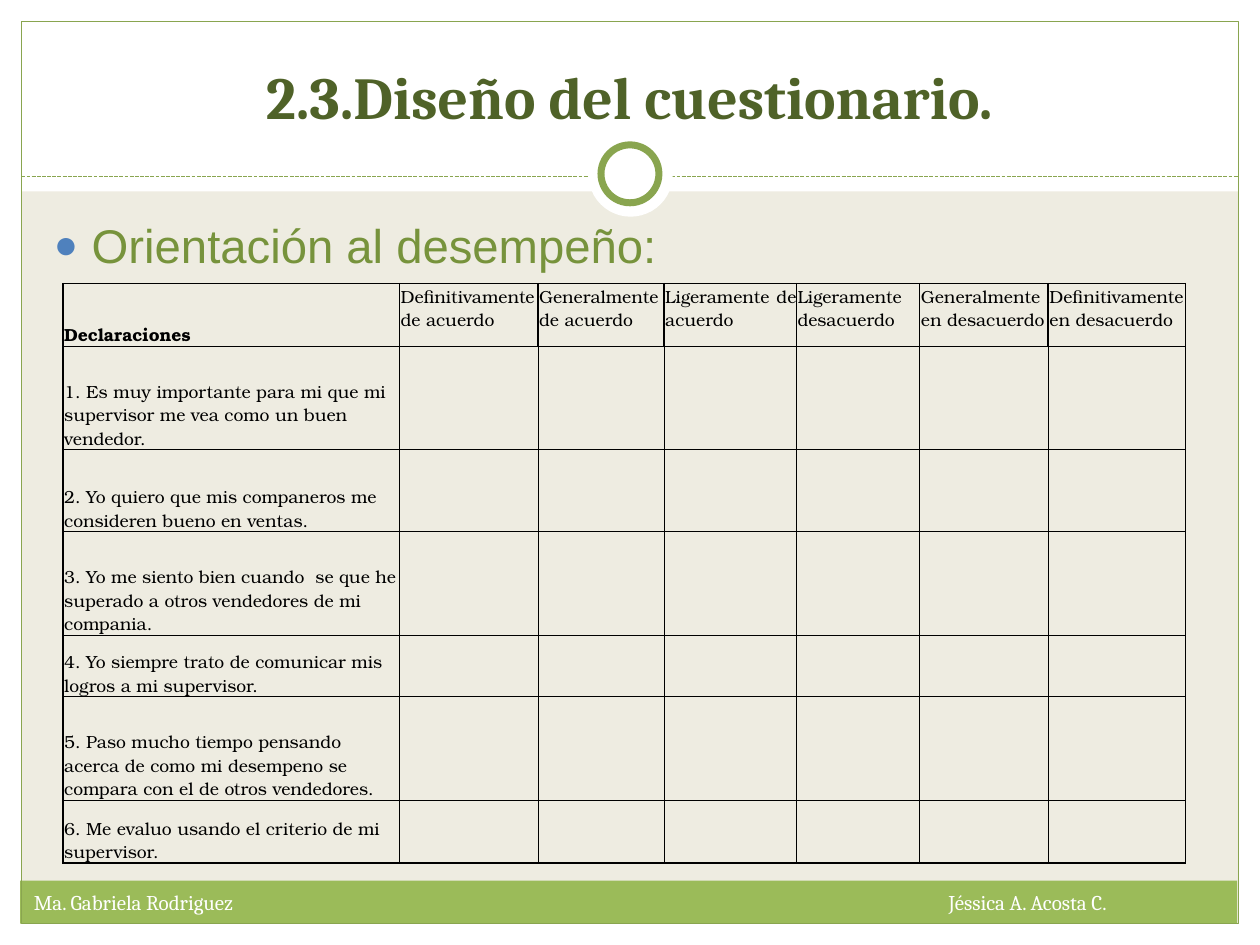
"""Build the questionnaire design slide with its performance orientation table."""
from lxml.etree import SubElement
from pptx import Presentation
from pptx.dml.color import RGBColor
from pptx.enum.dml import MSO_LINE
from pptx.enum.shapes import MSO_CONNECTOR, MSO_SHAPE
from pptx.enum.text import MSO_ANCHOR, MSO_AUTO_SIZE, PP_ALIGN
from pptx.oxml.ns import qn
from pptx.util import Inches, Pt

THEME = {
    "background": "EEECE1", "white": "FFFFFF", "black": "000000",
    "band": "9BBB59", "rule": "89A54F", "title": "4F6228",
    "subtitle": "77933C", "bullet": "4F81BD",
    "title_size": 34, "subtitle_size": 27, "footer_size": 12, "table_size": 10,
    "serif": "Cambria", "sans": "Arial", "table_font": "TeX Gyre Bonum",
}


def write(tf, text, size, color, font, bold=False, align=PP_ALIGN.LEFT):
    tf.word_wrap = True
    p = tf.paragraphs[0]
    p.alignment = align
    r = p.add_run()
    r.text = text
    r.font.size = Pt(THEME[size])
    r.font.color.rgb = RGBColor.from_string(THEME[color])
    r.font.name = THEME[font]
    r.font.bold = bold
    return p


def add_border(cell, side, width):
    ln = SubElement(cell._tc.get_or_add_tcPr(), qn(f"a:ln{side}"), w=str(Pt(width)))
    fill = SubElement(ln, qn("a:solidFill"))
    SubElement(fill, qn("a:srgbClr"), val=THEME["black"])


prs = Presentation()
prs.slide_width, prs.slide_height = Inches(10), Inches(7.5)
s = prs.slides.add_slide(prs.slide_layouts[5])
s.background.fill.solid()
s.background.fill.fore_color.rgb = RGBColor.from_string(THEME["background"])

RECT, OVAL = MSO_SHAPE.RECTANGLE, MSO_SHAPE.OVAL
FRAME = [
    (RECT, (0, 7.33, 10, 0.17), "white", None, 0),
    (RECT, (0, 0, 10, 1.52), "white", None, 0),
    (RECT, (0, 0, 0.17, 7.5), "white", None, 0),
    (RECT, (9.83, 0, 0.17, 7.5), "white", None, 0),
    (RECT, (0.16, 6.99, 9.66, 0.34), "band", None, 0),
    (RECT, (0.17, 0.17, 9.66, 7.16), None, "rule", 0.75),
    (OVAL, (4.67, 1.05, 0.67, 0.67), "white", None, 0),
    (OVAL, (4.77, 1.15, 0.46, 0.46), "white", "rule", 4),
]
rule = s.shapes.add_connector(
    MSO_CONNECTOR.STRAIGHT, Inches(0.17), Inches(1.4), Inches(9.83), Inches(1.4))
rule.line.color.rgb = RGBColor.from_string(THEME["rule"])
rule.line.width = Pt(0.75)
rule.line.dash_style = MSO_LINE.SQUARE_DOT
SubElement(rule._element.spPr, qn("a:effectLst"))

for kind, box, fill, line, width in FRAME:
    if kind == OVAL and line is None:
        s.shapes.element.append(rule._element)
    sp = s.shapes.add_shape(kind, *map(Inches, box))
    sp.shadow.inherit = False
    if fill:
        sp.fill.solid()
        sp.fill.fore_color.rgb = RGBColor.from_string(THEME[fill])
    else:
        sp.fill.background()
    if line:
        sp.line.color.rgb = RGBColor.from_string(THEME[line])
        sp.line.width = Pt(width)
    else:
        sp.line.fill.background()

title = s.shapes.title
s.shapes.element.append(title._element)
title.left, title.top, title.width, title.height = map(Inches, (0.08, 0.17, 9.83, 0.92))
title.text_frame.auto_size = MSO_AUTO_SIZE.NONE
title.text_frame.vertical_anchor = MSO_ANCHOR.BOTTOM
write(title.text_frame, "2.3.Diseño del cuestionario.", "title_size", "title", "serif",
      bold=True, align=PP_ALIGN.CENTER)

footer = s.shapes.add_textbox(*map(Inches, (0.17, 7.01, 9.58, 0.4)))
p = write(footer.text_frame, "Ma. Gabriela Rodriguez\tJéssica A. Acosta C.",
          "footer_size", "white", "serif")
tabs = SubElement(p._p.get_or_add_pPr(), qn("a:tabLst"))
SubElement(tabs, qn("a:tab"), pos=str(Inches(7.26)), algn="l")

subtitle = s.shapes.add_textbox(*map(Inches, (0.33, 1.67, 9.3, 0.55)))
p = write(subtitle.text_frame, "Orientación al desempeño:",
          "subtitle_size", "subtitle", "sans")
pPr = p._p.get_or_add_pPr()
pPr.set("marL", str(Inches(0.3)))
pPr.set("indent", str(-Inches(0.3)))
SubElement(SubElement(pPr, qn("a:buClr")), qn("a:srgbClr"), val=THEME["bullet"])
SubElement(pPr, qn("a:buSzPct"), val="85000")
SubElement(pPr, qn("a:buFont"), typeface=THEME["sans"])
SubElement(pPr, qn("a:buChar"), char="●")

COLS = [2.67, 1.1, 1, 1.05, 0.98, 1.02, 1.09]
ROWS = [0.5, 0.82, 0.65, 0.82, 0.49, 0.82, 0.5]
HEADERS = [
    "Declaraciones", "Definitivamente de acuerdo", "Generalmente de acuerdo",
    "Ligeramente de acuerdo", "Ligeramente desacuerdo",
    "Generalmente en desacuerdo", "Definitivamente en desacuerdo",
]
STATEMENTS = [
    "1. Es muy importante para mi que mi supervisor me vea como un buen vendedor.",
    "2. Yo quiero que mis companeros me consideren bueno en ventas.",
    "3. Yo me siento bien cuando  se que he superado a otros vendedores de mi compania.",
    "4. Yo siempre trato de comunicar mis logros a mi supervisor.",
    "5. Paso mucho tiempo pensando acerca de como mi desempeno se compara con el de otros vendedores.",
    "6. Me evaluo usando el criterio de mi supervisor.",
]
table = s.shapes.add_table(len(ROWS), len(COLS), Inches(0.5), Inches(2.25),
                           Inches(sum(COLS)), Inches(sum(ROWS))).table
table.first_row = table.horz_banding = False
for col, width in zip(table.columns, COLS):
    col.width = Inches(width)
for row, height in zip(table.rows, ROWS):
    row.height = Inches(height)

grid = [HEADERS] + [[text] + [""] * (len(COLS) - 1) for text in STATEMENTS]
for i, texts in enumerate(grid):
    for j, text in enumerate(texts):
        cell = table.cell(i, j)
        cell.margin_left = cell.margin_top = Inches(0.01)
        cell.margin_right = cell.margin_bottom = 0
        cell.vertical_anchor = MSO_ANCHOR.BOTTOM if j == 0 else MSO_ANCHOR.TOP
        heavy = {"L": j == 0, "R": j == len(COLS) - 1, "T": i == 1, "B": i == len(ROWS) - 1}
        for side, edge in heavy.items():
            add_border(cell, side, 1 if i == 0 or edge else 0.5)
        cell.fill.background()
        if text:
            write(cell.text_frame, text, "table_size", "black", "table_font",
                  bold=i == j == 0, align=PP_ALIGN.JUSTIFY if j else PP_ALIGN.LEFT)

prs.save("out.pptx")
